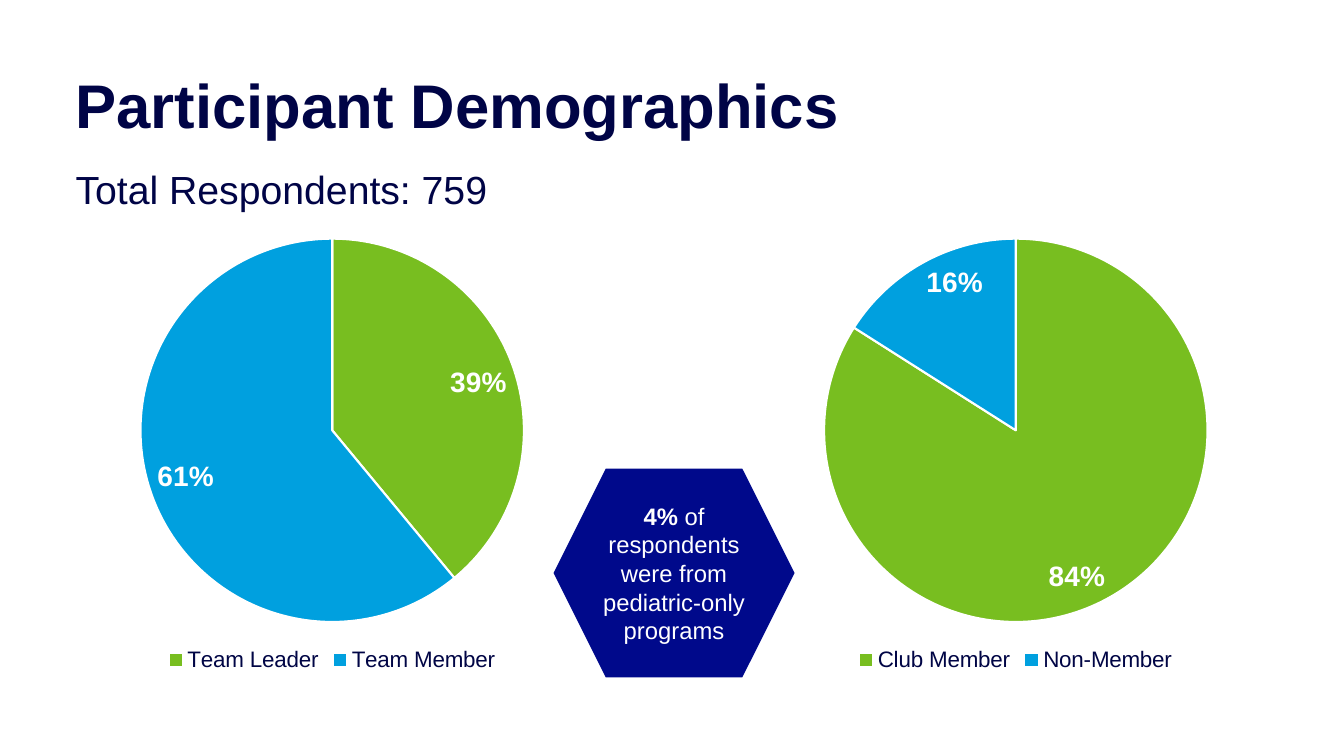
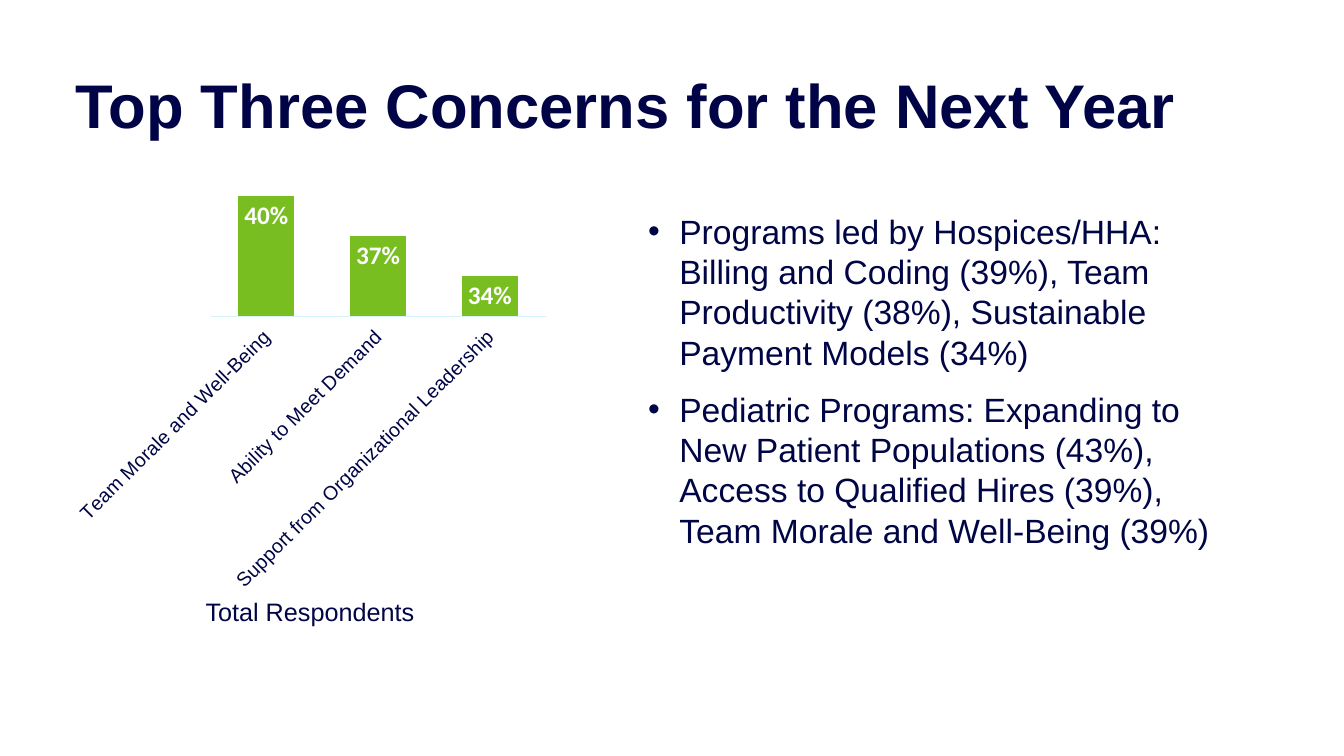
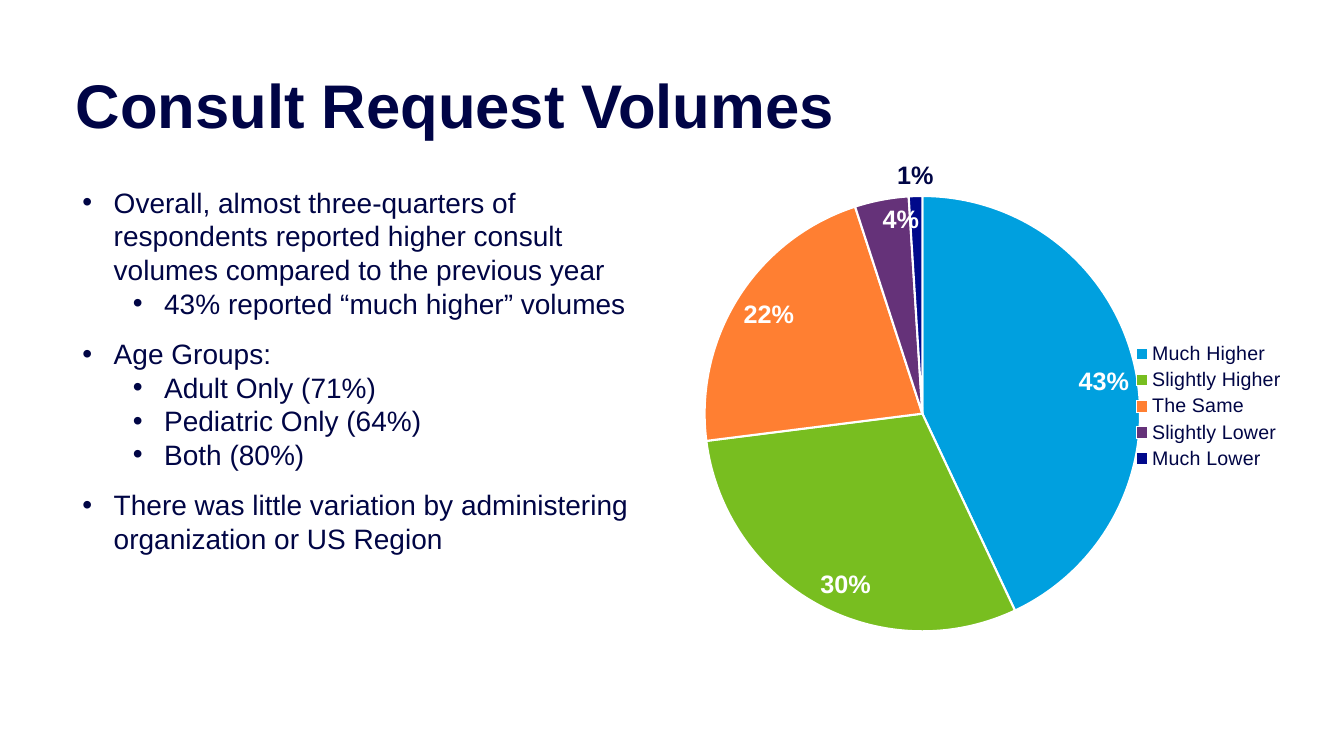
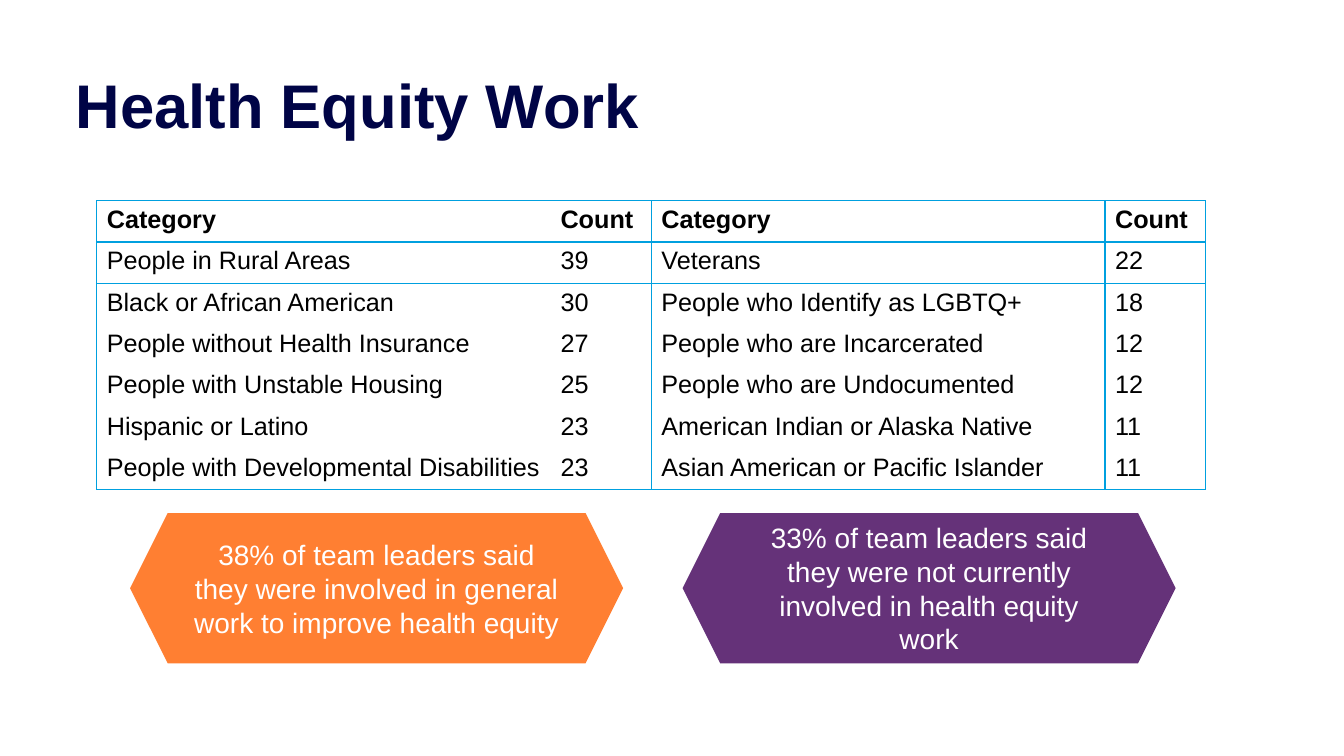
from lxml.etree import SubElement
from pptx import Presentation
from pptx.chart.data import CategoryChartData
from pptx.dml.color import RGBColor
from pptx.enum.chart import XL_CHART_TYPE, XL_LABEL_POSITION, XL_LEGEND_POSITION, XL_TICK_LABEL_POSITION, XL_TICK_MARK
from pptx.enum.shapes import MSO_SHAPE
from pptx.enum.text import MSO_ANCHOR, PP_ALIGN
from pptx.oxml.ns import qn
from pptx.util import Inches, Pt

NAVY = RGBColor(0x00, 0x04, 0x46)
INK = RGBColor(0x00, 0x05, 0x45)
BLUE = RGBColor(0x00, 0xA0, 0xDF)
GREEN = RGBColor(0x78, 0xBE, 0x20)
ORANGE = RGBColor(0xFF, 0x7F, 0x32)
PURPLE = RGBColor(0x65, 0x32, 0x79)
ROYAL = RGBColor(0x00, 0x09, 0x8B)
PALE = RGBColor(0xD4, 0xF3, 0xFF)
WHITE = RGBColor(0xFF, 0xFF, 0xFF)
BLACK = RGBColor(0x00, 0x00, 0x00)


class Report:
    def __init__(self):
        self.deck = Presentation()
        self.deck.slide_width = Inches(13.33)
        self.deck.slide_height = Inches(7.5)
        self.page = None

    def style(self, font, size, color, bold=False, name="Arial"):
        font.name, font.size, font.bold = name, Pt(size), bold
        font.color.rgb = color

    def add_page(self, title, width=10):
        self.page = self.deck.slides.add_slide(self.deck.slide_layouts[6])
        self.heading(title, 0.75, width, 0.67, 44, 0.9, True)

    def text_frame(self, left, top, width, height):
        box = self.page.shapes.add_textbox(Inches(left), Inches(top), Inches(width), Inches(height))
        box.text_frame.word_wrap = True
        return box.text_frame

    def heading(self, text, top, width, height, size, spacing, bold=False):
        frame = self.text_frame(0.75, top, width, height)
        frame.margin_left = frame.margin_right = frame.margin_top = frame.margin_bottom = 0
        para = frame.paragraphs[0]
        para.text = text
        para.line_spacing = spacing
        self.style(para.font, size, NAVY, bold)

    def label(self, text, left, top, width, height):
        para = self.text_frame(left, top, width, height).paragraphs[0]
        para.text = text
        self.style(para.font, 18, INK)

    def bullets(self, items, left, top, width, height, size):
        frame = self.text_frame(left, top, width, height)
        for index, (level, text, after) in enumerate(items):
            para = frame.add_paragraph() if index else frame.paragraphs[0]
            para.text = text
            para.level = level
            props = para._p.get_or_add_pPr()
            props.set("marL", str(Inches(0.31 + 0.5 * level)))
            props.set("indent", str(Inches(-0.31)))
            SubElement(props, qn("a:buFont")).set("typeface", "Arial")
            SubElement(props, qn("a:buChar")).set("char", "•")
            para.space_after = Pt(after)
            self.style(para.font, size, INK)

    def hexagon(self, spans, left, top, width, height, color, size):
        shape = self.page.shapes.add_shape(
            MSO_SHAPE.HEXAGON, Inches(left), Inches(top), Inches(width), Inches(height))
        shape.shadow.inherit = False
        shape.fill.solid()
        shape.fill.fore_color.rgb = color
        shape.line.fill.background()
        frame = shape.text_frame
        frame.word_wrap = True
        frame.vertical_anchor = MSO_ANCHOR.MIDDLE
        para = frame.paragraphs[0]
        para.alignment = PP_ALIGN.CENTER
        self.style(para.font, size, WHITE)
        for text, bold in spans:
            span = para.add_run()
            span.text = text
            span.font.bold = bold

    def chart(self, kind, values, left, top, width, height):
        data = CategoryChartData()
        data.categories = list(values)
        data.add_series("Series 1", list(values.values()))
        chart = self.page.shapes.add_chart(
            kind, Inches(left), Inches(top), Inches(width), Inches(height), data).chart
        chart.has_title = False
        chart.has_legend = False
        self.style(chart.font, 10, BLUE, name="Calibri")
        return chart

    def value_labels(self, plot, size, percent, name="Arial"):
        plot.has_data_labels = True
        labels = plot.data_labels
        labels.show_percentage = percent
        labels.show_value = not percent
        labels.number_format = "0%"
        labels.number_format_is_linked = False
        labels.position = XL_LABEL_POSITION.INSIDE_END
        self.style(labels.font, size, WHITE, True, name)

    def pie(self, values, colors, left, top, width, height, label_size, legend_size, legend_side):
        chart = self.chart(XL_CHART_TYPE.PIE, values, left, top, width, height)
        chart.has_legend = True
        chart.legend.position = legend_side
        chart.legend.include_in_layout = False
        self.style(chart.legend.font, legend_size, INK)
        plot = chart.plots[0]
        plot.vary_by_categories = True
        self.value_labels(plot, label_size, True)
        for index, color in enumerate(colors):
            point = plot.series[0].points[index]
            point.format.fill.solid()
            point.format.fill.fore_color.rgb = color
            point.format.line.color.rgb = WHITE
            point.format.line.width = Pt(1.5)
        return chart

    def outside_label(self, chart, index, size):
        plot = chart.plots[0]
        series_labels = plot.series[0].data_labels
        series_labels.show_percentage = True
        series_labels.show_value = False
        series_labels.number_format = "0%"
        series_labels.number_format_is_linked = False
        series_labels.position = XL_LABEL_POSITION.INSIDE_END
        self.style(series_labels.font, size, WHITE, True)
        label = plot.series[0].points[index].data_label
        self.style(label.font, size, INK, True)
        label.position = XL_LABEL_POSITION.OUTSIDE_END
        for node in chart.element.iter(qn("c:dLbl")):
            node.find(qn("c:showVal")).set("val", "0")
            node.find(qn("c:showPercent")).set("val", "1")

    def place_plot(self, chart, left, top, width, height):
        area = chart.element.find(".//" + qn("c:plotArea"))
        layout = area.find(qn("c:layout"))
        if layout is None:
            layout = SubElement(area, qn("c:layout"))
            area.insert(0, layout)
        manual = SubElement(layout, qn("c:manualLayout"))
        settings = [("layoutTarget", "inner"), ("xMode", "edge"), ("yMode", "edge"),
                    ("x", left), ("y", top), ("w", width), ("h", height)]
        for tag, value in settings:
            SubElement(manual, qn("c:" + tag)).set("val", str(value))

    def columns(self, values, left, top, width, height):
        chart = self.chart(XL_CHART_TYPE.COLUMN_CLUSTERED, values, left, top, width, height)
        plot = chart.plots[0]
        plot.vary_by_categories = False
        plot.gap_width, plot.overlap = 100, -27
        series = plot.series[0]
        series.format.fill.solid()
        series.format.fill.fore_color.rgb = GREEN
        self.value_labels(plot, 18, False, "Calibri")
        chart.value_axis.has_major_gridlines = False
        chart.value_axis.visible = False
        axis = chart.category_axis
        axis.major_tick_mark = XL_TICK_MARK.NONE
        axis.tick_label_position = XL_TICK_LABEL_POSITION.LOW
        axis.format.line.color.rgb = PALE
        axis.format.line.width = Pt(0.75)
        self.style(axis.tick_labels.font, 14, INK)
        body = chart.element.find(".//" + qn("c:catAx")).find(".//" + qn("a:bodyPr"))
        body.set("rot", "-2700000")
        body.set("vert", "horz")

    def table(self, rows, left, top, widths, row_height, vertical_rules, horizontal_rules):
        table = self.page.shapes.add_table(
            len(rows), len(widths), Inches(left), Inches(top),
            Inches(sum(widths)), Inches(row_height * len(rows))).table
        table.first_row = table.horz_banding = False
        for column, width in zip(table.columns, widths):
            column.width = Inches(width)
        for y, row in enumerate(rows):
            table.rows[y].height = Inches(row_height)
            for x, text in enumerate(row):
                cell = table.cell(y, x)
                sides = {"L": x in vertical_rules, "R": x + 1 in vertical_rules,
                         "T": y in horizontal_rules, "B": y + 1 in horizontal_rules}
                self.borders(cell, sides)
                cell.fill.background()
                para = cell.text_frame.paragraphs[0]
                para.text = text
                self.style(para.font, 18, BLACK, y == 0)

    def borders(self, cell, sides):
        props = cell._tc.get_or_add_tcPr()
        for side, ruled in sides.items():
            line = SubElement(props, qn("a:ln" + side))
            line.set("w", str(Pt(1)))
            if ruled:
                fill = SubElement(line, qn("a:solidFill"))
                SubElement(fill, qn("a:srgbClr")).set("val", str(BLUE))
            else:
                SubElement(line, qn("a:noFill"))


def main():
    report = Report()

    report.add_page("Participant Demographics")
    report.heading("Total Respondents: 759", 1.59, 10, 0.48, 28, 1.1)
    for left, values in [(0.75, {"Team Leader": 39, "Team Member": 61}),
                         (7.53, {"Club Member": 84, "Non-Member": 16})]:
        report.pie(values, [GREEN, BLUE], left, 2.23, 5.09, 4.48, 20, 16, XL_LEGEND_POSITION.BOTTOM)
    report.hexagon([("4% ", True), ("of respondents were from pediatric-only programs", False)],
                   5.49, 4.65, 2.39, 2.07, ROYAL, 17)

    report.add_page("Top Three Concerns for the Next Year", 11.16)
    report.columns({"Team Morale and Well-Being": 0.4, "Ability to Meet Demand": 0.37,
                    "Support from Organizational Leadership": 0.34}, 0.65, 1.73, 4.86, 4.14)
    report.bullets([
        (0, "Programs led by Hospices/HHA: Billing and Coding (39%), Team Productivity (38%), "
            "Sustainable Payment Models (34%)", 12),
        (0, "Pediatric Programs: Expanding to New Patient Populations (43%), "
            "Access to Qualified Hires (39%), Team Morale and Well-Being (39%)", 12),
    ], 6.33, 2.04, 5.96, 3.5, 24)
    report.label("Total Respondents", 1.94, 5.87, 2.29, 0.4)

    report.add_page("Consult Request Volumes")
    volumes = report.pie(
        {"Much Higher": 43, "Slightly Higher": 30, "The Same": 22, "Slightly Lower": 4, "Much Lower": 1},
        [BLUE, GREEN, ORANGE, PURPLE, ROYAL], 6.68, 1.54, 6.17, 4.98, 18, 14, XL_LEGEND_POSITION.RIGHT)
    report.outside_label(volumes, 4, 18)
    report.place_plot(volumes, 0.05, 0.08, 0.7, 0.87)
    report.bullets([
        (0, "Overall, almost three-quarters of respondents reported higher consult volumes "
            "compared to the previous year", 0),
        (1, "43% reported “much higher” volumes", 12),
        (0, "Age Groups:", 0),
        (1, "Adult Only (71%)", 0),
        (1, "Pediatric Only (64%)", 0),
        (1, "Both (80%)", 12),
        (0, "There was little variation by administering organization or US Region", 0),
    ], 0.72, 1.79, 5.96, 4.64, 20)

    report.add_page("Health Equity Work")
    report.table([
        ("Category", "Count", "Category", "Count"),
        ("People in Rural Areas", "39", "Veterans", "22"),
        ("Black or African American", "30", "People who Identify as LGBTQ+", "18"),
        ("People without Health Insurance", "27", "People who are Incarcerated", "12"),
        ("People with Unstable Housing", "25", "People who are Undocumented", "12"),
        ("Hispanic or Latino", "23", "American Indian or Alaska Native", "11"),
        ("People with Developmental Disabilities", "23", "Asian American or Pacific Islander", "11"),
    ], 0.96, 1.99, [4.5, 1, 4.5, 1], 0.41, {0, 2, 3, 4}, {0, 1, 2, 7})
    for left, color, text in [
        (1.29, ORANGE, "38% of team leaders said they were involved in general work to improve health equity"),
        (6.77, PURPLE, "33% of team leaders said they were not currently involved in health equity work"),
    ]:
        report.hexagon([(text, False)], left, 5.09, 4.89, 1.49, color, 20)

    report.deck.save("out.pptx")


if __name__ == "__main__":
    main()
